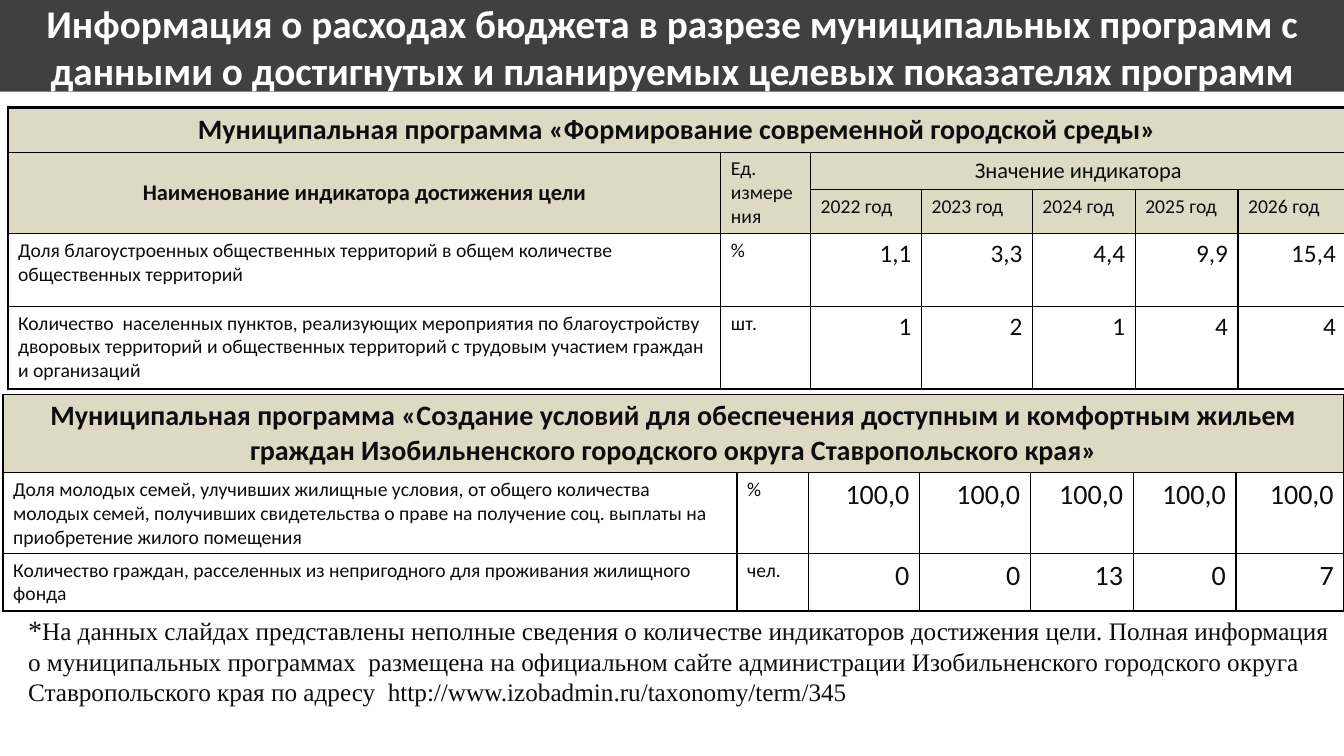
from lxml.etree import SubElement
from pptx import Presentation
from pptx.dml.color import RGBColor
from pptx.enum.text import MSO_ANCHOR, PP_ALIGN
from pptx.oxml.ns import qn
from pptx.util import Inches, Pt

WIDTH, HEIGHT = Inches(13.33), Inches(7.5)
COLORS = {"bar": "404040", "white": "FFFFFF", "ink": "0D0D0D", "sand": "DDD9C3", "line": "000000"}
LEFT, CENTER, RIGHT = PP_ALIGN.LEFT, PP_ALIGN.CENTER, PP_ALIGN.RIGHT
THIN, THICK = 1, 2.25
YEARS = [8.25, 8.25, 7.65, 7.65, 8.03]

TITLE = ("Информация о расходах бюджета в разрезе муниципальных программ с данными "
         "о достигнутых и планируемых целевых показателях программ")
URBAN = "Муниципальная программа «Формирование современной городской среды»"
URBAN_ROWS = [
    ["Доля благоустроенных общественных территорий в общем количестве общественных территорий",
     "%", "1,1", "3,3", "4,4", "9,9", "15,4"],
    ["Количество  населенных пунктов, реализующих мероприятия по благоустройству дворовых "
     "территорий и общественных территорий с трудовым участием граждан и организаций",
     "шт.", "1", "2", "1", "4", "4"],
]
HOUSING = ("Муниципальная программа «Создание условий для обеспечения доступным и комфортным "
           "жильем граждан Изобильненского городского округа Ставропольского края»")
HOUSING_ROWS = [
    ["Доля молодых семей, улучивших жилищные условия, от общего количества молодых семей, "
     "получивших свидетельства о праве на получение соц. выплаты на приобретение жилого помещения",
     "%"] + ["100,0"] * 5,
    ["Количество граждан, расселенных из непригодного для проживания жилищного фонда",
     "чел.", "0", "0", "13", "0", "7"],
]
NOTE = ("На данных слайдах представлены неполные сведения о количестве индикаторов достижения "
        "цели. Полная информация о муниципальных программах  размещена на официальном сайте "
        "администрации Изобильненского городского округа Ставропольского края по адресу  "
        "http://www.izobadmin.ru/taxonomy/term/345")


def across(share):
    """Turn a percentage of the slide width into a length."""
    return round(WIDTH * share / 100)


def down(share):
    """Turn a percentage of the slide height into a length."""
    return round(HEIGHT * share / 100)


def rgb(name):
    """Look up a named colour."""
    return RGBColor.from_string(COLORS[name])


def style(para, size, bold=False, align=LEFT, color="ink", face="Calibri"):
    """Set the font and alignment of a paragraph."""
    para.alignment = align
    font = para.font
    font.name, font.size, font.bold = face, Pt(size), bold
    font.color.rgb = rgb(color)


def add_box(slide, left, top, width, height):
    """Add a wrapping text box placed by slide shares."""
    box = slide.shapes.add_textbox(across(left), down(top), across(width), down(height))
    box.text_frame.word_wrap = True
    return box


def add_title(slide):
    """Add the dark bar with the slide heading."""
    box = add_box(slide, 0, 0, 100, 12.13)
    box.fill.solid()
    box.fill.fore_color.rgb = rgb("bar")
    box.text_frame.vertical_anchor = MSO_ANCHOR.MIDDLE
    para = box.text_frame.paragraphs[0]
    para.text = TITLE
    style(para, 28, True, CENTER, "white")


def add_note(slide):
    """Add the footnote with its larger asterisk."""
    para = add_box(slide, 1.35, 80.4, 98.65, 18).text_frame.paragraphs[0]
    style(para, 18, face="Times New Roman")
    star = para.add_run()
    star.text = "*"
    star.font.size = Pt(20)
    para.add_run().text = NOTE


def add_grid(slide, left, top, cols, rows):
    """Add a plain table whose columns and rows are slide shares."""
    frame = slide.shapes.add_table(len(rows), len(cols), across(left), down(top),
                                   across(sum(cols)), down(sum(rows)))
    table = frame.table
    table.first_row = table.horz_banding = False
    for col, share in zip(table.columns, cols):
        col.width = across(share)
    for row, share in zip(table.rows, rows):
        row.height = down(share)
    return table


def fill_cell(cell, text, size, bold=False, align=LEFT, middle=False):
    """Write text into a table cell."""
    cell.text = text
    style(cell.text_frame.paragraphs[0], size, bold, align)
    if middle:
        cell.vertical_anchor = MSO_ANCHOR.MIDDLE


def fill_rows(table, start, rows, size):
    """Write indicator rows: name, unit and yearly values."""
    for r, row in enumerate(rows, start):
        for c, text in enumerate(row):
            value = c > 1
            fill_cell(table.cell(r, c), text, size if value else 14, align=RIGHT if value else LEFT)


def draw_edge(cell, side, width):
    """Draw one border of a cell."""
    line = SubElement(cell._tc.get_or_add_tcPr(), qn("a:ln" + side), w=str(Pt(width)))
    solid = SubElement(line, qn("a:solidFill"))
    SubElement(solid, qn("a:srgbClr"), val=COLORS["line"])


def finish(table, heads, top, bottom):
    """Draw all borders and shade the heading rows."""
    count, last = len(table.rows), len(table.columns) - 1
    for r in range(count):
        for c in range(last + 1):
            cell = table.cell(r, c)
            end = c + (cell.span_width if cell.is_merge_origin else 1) - 1
            draw_edge(cell, "L", THICK if c == 0 else THIN)
            draw_edge(cell, "R", THICK if end == last else THIN)
            draw_edge(cell, "T", top if r == 0 else THIN)
            draw_edge(cell, "B", bottom if r == count - 1 else THIN)
            if r < heads:
                cell.fill.solid()
                cell.fill.fore_color.rgb = rgb("sand")
            else:
                cell.fill.background()


def add_head(table, text):
    """Merge the top row and write the programme name."""
    table.cell(0, 0).merge(table.cell(0, len(table.columns) - 1))
    fill_cell(table.cell(0, 0), text, 20, True, CENTER)


def add_urban(slide):
    """Add the urban environment table."""
    table = add_grid(slide, 0.6, 14.27, [53.04, 6.68] + YEARS, [5.87, 4.93, 5.87, 9.6, 10.93])
    add_head(table, URBAN)
    for first, final in (((1, 0), (2, 0)), ((1, 1), (2, 1)), ((1, 2), (1, 6))):
        table.cell(*first).merge(table.cell(*final))
    fill_cell(table.cell(1, 0), "Наименование индикатора достижения цели", 16, True, CENTER, True)
    fill_cell(table.cell(1, 1), "Ед. измерения", 14, middle=True)
    fill_cell(table.cell(1, 2), "Значение индикатора", 16, align=CENTER, middle=True)
    for c in range(2, 7):
        fill_cell(table.cell(2, c), f"{2020 + c} год", 14)
    fill_rows(table, 3, URBAN_ROWS, 18)
    finish(table, 3, THICK, THIN)


def add_housing(slide):
    """Add the housing table."""
    table = add_grid(slide, 0.23, 52.13, [54.61, 5.33] + YEARS, [10.4, 10.67, 7.6])
    add_head(table, HOUSING)
    fill_rows(table, 1, HOUSING_ROWS, 20)
    finish(table, 1, THIN, THICK)


def main():
    """Build the slide and save it."""
    deck = Presentation()
    deck.slide_width, deck.slide_height = WIDTH, HEIGHT
    slide = deck.slides.add_slide(deck.slide_layouts[6])
    add_title(slide)
    add_urban(slide)
    add_note(slide)
    add_housing(slide)
    deck.save("out.pptx")


if __name__ == "__main__":
    main()
